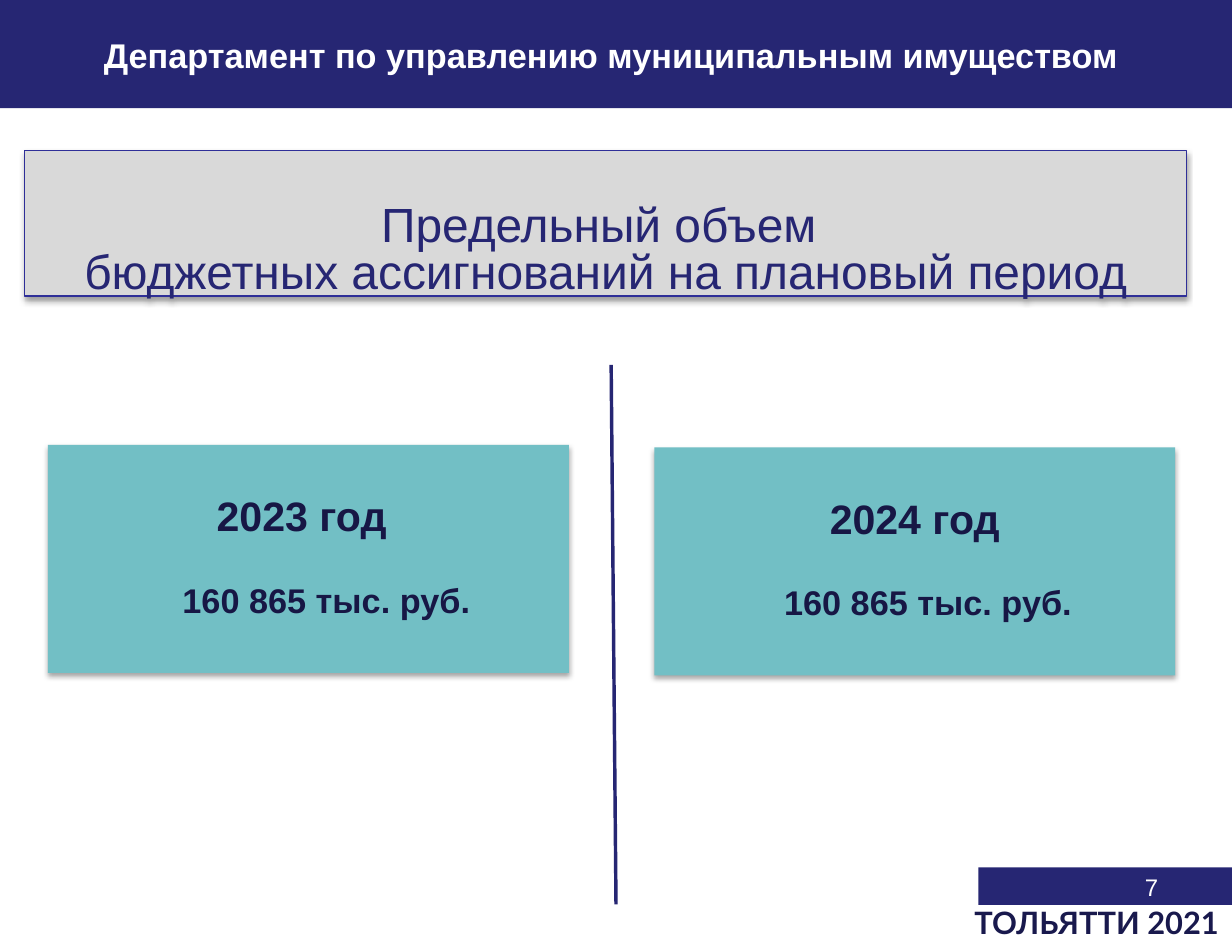
"""Build the slide on planned municipal budget limits for 2023 and 2024."""
from lxml.etree import SubElement
from pptx import Presentation
from pptx.dml.color import RGBColor
from pptx.enum.shapes import MSO_CONNECTOR, MSO_SHAPE
from pptx.enum.text import MSO_ANCHOR, PP_ALIGN
from pptx.oxml.ns import qn
from pptx.util import Cm, Pt

COLORS = {
    "navy": "262673",
    "border": "2F2F98",
    "gray": "D9D9D9",
    "teal": "72BFC5",
    "ink": "171745",
    "footer": "19194D",
    "white": "FFFFFF",
}


def add_panel(left, top, width, height, fill, shadow_alpha=0):
    panel = slide.shapes.add_shape(
        MSO_SHAPE.RECTANGLE, Cm(left), Cm(top), Cm(width), Cm(height))
    panel.shadow.inherit = False
    panel.fill.solid()
    panel.fill.fore_color.rgb = RGBColor.from_string(COLORS[fill])
    panel.line.fill.background()
    panel.text_frame.word_wrap = True
    panel.text_frame.vertical_anchor = MSO_ANCHOR.TOP
    if shadow_alpha:
        effects = panel._element.spPr.find(qn("a:effectLst"))
        shadow = SubElement(effects, qn("a:outerShdw"), blurRad=str(Pt(3.1)),
                            dist=str(Pt(1.8)), dir="5400000", rotWithShape="0")
        shade = SubElement(shadow, qn("a:srgbClr"), val="000000")
        SubElement(shade, qn("a:alpha"), val=str(shadow_alpha * 1000))
    return panel


def write_line(paragraph, text, size, color, bold=False, align=PP_ALIGN.CENTER,
               font="Arial", left=0, right=0):
    properties = paragraph._p.get_or_add_pPr()
    properties.set("marL", str(Cm(left)))
    properties.set("marR", str(Cm(right)))
    paragraph.alignment = align
    run = paragraph.add_run()
    run.text = text
    run.font.name = font
    run.font.size = Pt(size)
    run.font.bold = bold
    run.font.color.rgb = RGBColor.from_string(COLORS[color])


prs = Presentation()
prs.slide_width, prs.slide_height = Cm(25.4), Cm(19.6)
slide = prs.slides.add_slide(prs.slide_layouts[6])

add_panel(20.17, 17.88, 5.23, 0.77, "navy")
page_number = slide.shapes.add_textbox(Cm(18.21), Cm(17.86), Cm(5.92), Cm(1.37)).text_frame
page_number.word_wrap = True
write_line(page_number.paragraphs[0], "7", 14, "white", align=PP_ALIGN.RIGHT)

header = add_panel(0, 0, 25.4, 2.23, "navy").text_frame
header.vertical_anchor = MSO_ANCHOR.MIDDLE
header.margin_left, header.margin_right = Cm(0), Cm(0.2)
header.margin_top, header.margin_bottom = Cm(0.3), Cm(0.13)
header.paragraphs[0].line_spacing = 0.8
write_line(header.paragraphs[0], "Департамент по управлению муниципальным имуществом",
           20, "white", bold=True)

divider = slide.shapes.add_connector(
    MSO_CONNECTOR.STRAIGHT, Cm(12.6), Cm(7.52), Cm(12.7), Cm(18.64))
divider.line.color.rgb = RGBColor.from_string(COLORS["navy"])
divider.line.width = Pt(2)
SubElement(divider._element.spPr, qn("a:effectLst"))

title_panel = add_panel(0.51, 3.1, 23.95, 3, "gray", shadow_alpha=38)
title_panel.line.color.rgb = RGBColor.from_string(COLORS["border"])
title_panel.line.width = Pt(0.75)
title = title_panel.text_frame
title.margin_top = Cm(1.15)
title_lines = [("Предельный объем", 0.28),
               ("бюджетных ассигнований на плановый период", 0)]
for index, (text, right) in enumerate(title_lines):
    paragraph = title.add_paragraph() if index else title.paragraphs[0]
    paragraph.line_spacing = 0.8
    write_line(paragraph, text, 28, "navy", right=right)

years = [("2023 год", 0.99, 9.17, 0.28, 0.74),
         ("2024 год", 13.49, 9.22, 0, 0.55)]
for year, left, top, year_right, amount_left in years:
    limit = add_panel(left, top, 10.74, 4.7, "teal", shadow_alpha=35).text_frame
    limit.margin_top = Cm(0.94)
    write_line(limit.paragraphs[0], year, 24, "ink", bold=True, right=year_right)
    amount = limit.add_paragraph()
    amount.space_before = Pt(23)
    write_line(amount, "160 865 тыс. руб.", 20, "ink", bold=True, left=amount_left)

footer = slide.shapes.add_textbox(Cm(19.84), Cm(18.64), Cm(5.61), Cm(0.89)).text_frame
footer.word_wrap = True
footer.paragraphs[0].line_spacing = 0.8
write_line(footer.paragraphs[0], "ТОЛЬЯТТИ 2021", 18, "footer", bold=True,
           align=PP_ALIGN.LEFT, font="Lato")

prs.save("out.pptx")
